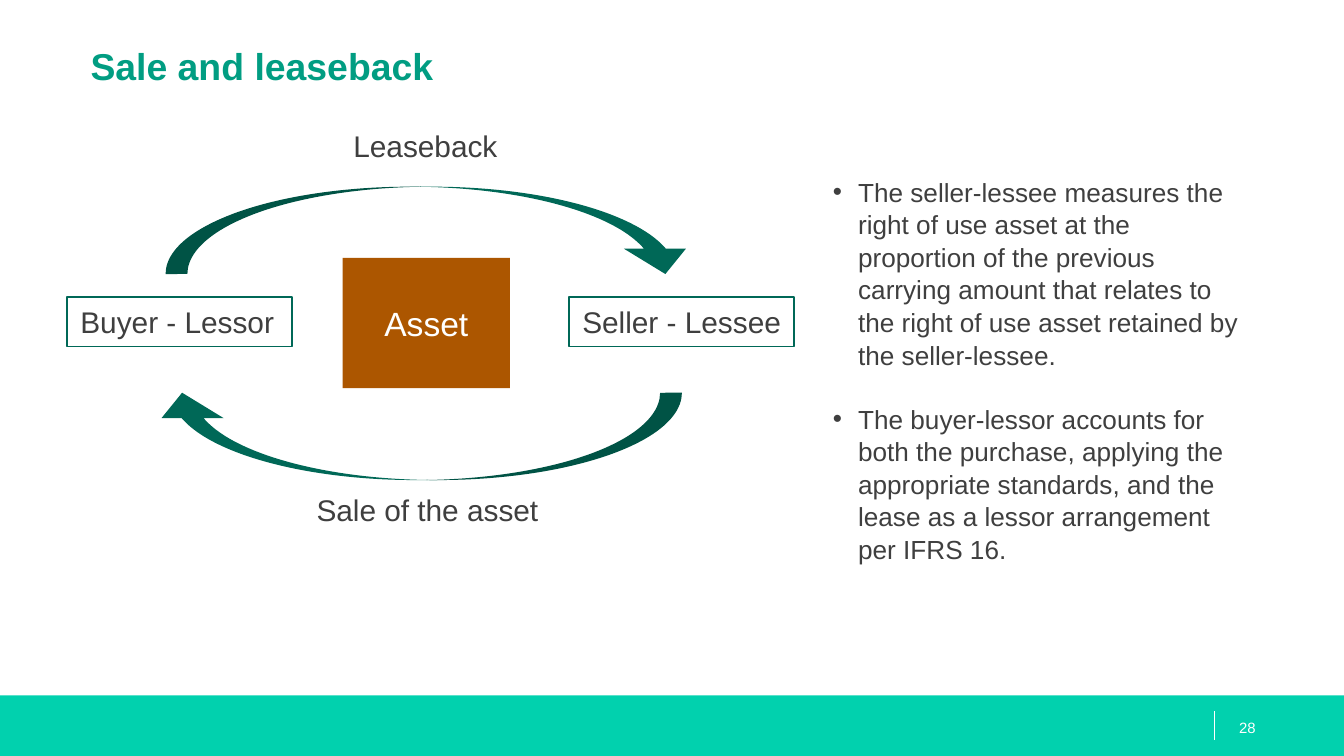
from lxml import etree
from pptx import Presentation
from pptx.dml.color import RGBColor
from pptx.enum import shapes, text
from pptx.oxml import ns
from pptx.util import Pt

GREEN = RGBColor(0x01, 0xD1, 0xAE)
TEAL = RGBColor(0x01, 0x9D, 0x82)
DARK_TEAL = RGBColor(0x00, 0x68, 0x57)
BROWN = RGBColor(0xAC, 0x56, 0x00)
GREY = RGBColor(0x3F, 0x3F, 0x3F)
WHITE = RGBColor(0xFF, 0xFF, 0xFF)

SHAPE = shapes.MSO_SHAPE
TOP, MIDDLE = text.MSO_ANCHOR.TOP, text.MSO_ANCHOR.MIDDLE
LEFT, CENTER = text.PP_ALIGN.LEFT, text.PP_ALIGN.CENTER
INSETS = (7.2, 3.6, 0, 3.6)


class Deck:
    """Style and current slide; all lengths are in points."""

    def __init__(self, width, height):
        self.prs = Presentation()
        self.prs.slide_width, self.prs.slide_height = Pt(width), Pt(height)
        self.s = self.prs.slides.add_slide(self.prs.slide_layouts[1])

    def place(self, sp, box):
        for name, value in zip(("left", "top", "width", "height"), box):
            setattr(sp, name, Pt(value))

    def set_text(self, sp, lines, size=16, color=GREY, bold=False, align=LEFT,
                 anchor=TOP, insets=INSETS):
        tf = sp.text_frame
        frame = {"word_wrap": True, "vertical_anchor": anchor,
                 "auto_size": text.MSO_AUTO_SIZE.NONE}
        sides = ("margin_left", "margin_top", "margin_right", "margin_bottom")
        frame.update(zip(sides, map(Pt, insets)))
        for name, value in frame.items():
            setattr(tf, name, value)
        tf.text = "\n".join(lines)
        font = {"name": "Arial", "size": Pt(size), "bold": bold}
        for p in tf.paragraphs:
            p.alignment, p.space_before = align, Pt(0)
            for r in p.runs:
                for name, value in font.items():
                    setattr(r.font, name, value)
                r.font.color.rgb = color
        return tf

    def title(self, box, words):
        sp = self.s.shapes.title
        self.place(sp, box)
        self.set_text(sp, [words], 20, TEAL, bold=True, insets=(0, 0, 0, 0))

    def bullets(self, box, items, gap):
        sp = self.s.placeholders[1]
        self.place(sp, box)
        tf = self.set_text(sp, items, 14, insets=(7.2, 3.6, 7.2, 3.6))
        for i, p in enumerate(tf.paragraphs):
            pPr = p._p.get_or_add_pPr()
            pPr.set("marL", str(Pt(13.5)))
            pPr.set("indent", str(-Pt(13.5)))
            etree.SubElement(pPr, ns.qn("a:buChar")).set("char", "•")
            p.line_spacing = 1.04
            p.space_before = Pt(gap if i else 0)

    def shape(self, kind, box, fill=None, line=None):
        sp = self.s.shapes.add_shape(kind, *map(Pt, box))
        sp.shadow.inherit = False
        if fill is None:
            sp.fill.background()
        else:
            sp.fill.solid()
            sp.fill.fore_color.rgb = fill
        if line is None:
            sp.line.fill.background()
        else:
            sp.line.color.rgb, sp.line.width = line, Pt(1)
        return sp

    def arrow(self, box, rotation=0):
        sp = self.shape(SHAPE.CURVED_DOWN_ARROW, box, DARK_TEAL)
        for i, value in enumerate((0.25, 0.71, 0.29)):
            sp.adjustments[i] = value
        sp.rotation = rotation

    def label(self, box, words, **style):
        sp = self.s.shapes.add_textbox(*map(Pt, box))
        self.set_text(sp, [words], **style)

    def rule(self, x, top, bottom):
        line = self.s.shapes.add_connector(
            shapes.MSO_CONNECTOR.STRAIGHT, Pt(x), Pt(top), Pt(x), Pt(bottom))
        line.line.color.rgb, line.line.width = WHITE, Pt(0.75)
        etree.SubElement(line._element.spPr, ns.qn("a:effectLst"))


def main():
    deck = Deck(720, 405)

    # Footer band with page number
    deck.shape(SHAPE.RECTANGLE, (0, 372.5, 720, 32.5), GREEN)
    deck.rule(650.7, 381, 396.7)
    deck.label((649.4, 373.5, 54, 32), "28", size=8, color=WHITE,
               anchor=MIDDLE, insets=(14.4, 0, 0, 0))

    deck.title((48.5, 23, 623.5, 52), "Sale and leaseback")

    # Asset between the two parties
    asset = deck.shape(SHAPE.RECTANGLE, (183.6, 138.2, 89.6, 69.8), BROWN)
    deck.set_text(asset, ["Asset"], 18, WHITE, align=CENTER, anchor=MIDDLE,
                  insets=(7.2, 3.6, 7.2, 3.6))
    for x, party in ((36, "Buyer - Lessor"), (304.9, "Seller - Lessee")):
        sp = deck.shape(SHAPE.RECTANGLE, (x, 159.1, 120.6, 26.6),
                        line=DARK_TEAL)
        deck.set_text(sp, [party])

    # Cycle arrows and their labels
    deck.arrow((88.7, 100, 284.4, 46.8))
    deck.arrow((80.9, 210.4, 284.4, 46.8), rotation=180)
    deck.label((162.5, 260, 142.6, 26.6), "Sale of the asset")
    deck.label((182.2, 64.8, 92.2, 26.6), "Leaseback")

    # Accounting treatment
    deck.bullets((439, 90, 234, 223.2), [
        "The seller-lessee measures the right of use asset at the proportion "
        "of the previous carrying amount that relates to the right of use "
        "asset retained by the seller-lessee.",
        "The buyer-lessor accounts for both the purchase, applying the "
        "appropriate standards, and the lease as a lessor arrangement per "
        "IFRS 16.",
    ], gap=16.8)

    deck.prs.save("out.pptx")


if __name__ == "__main__":
    main()
